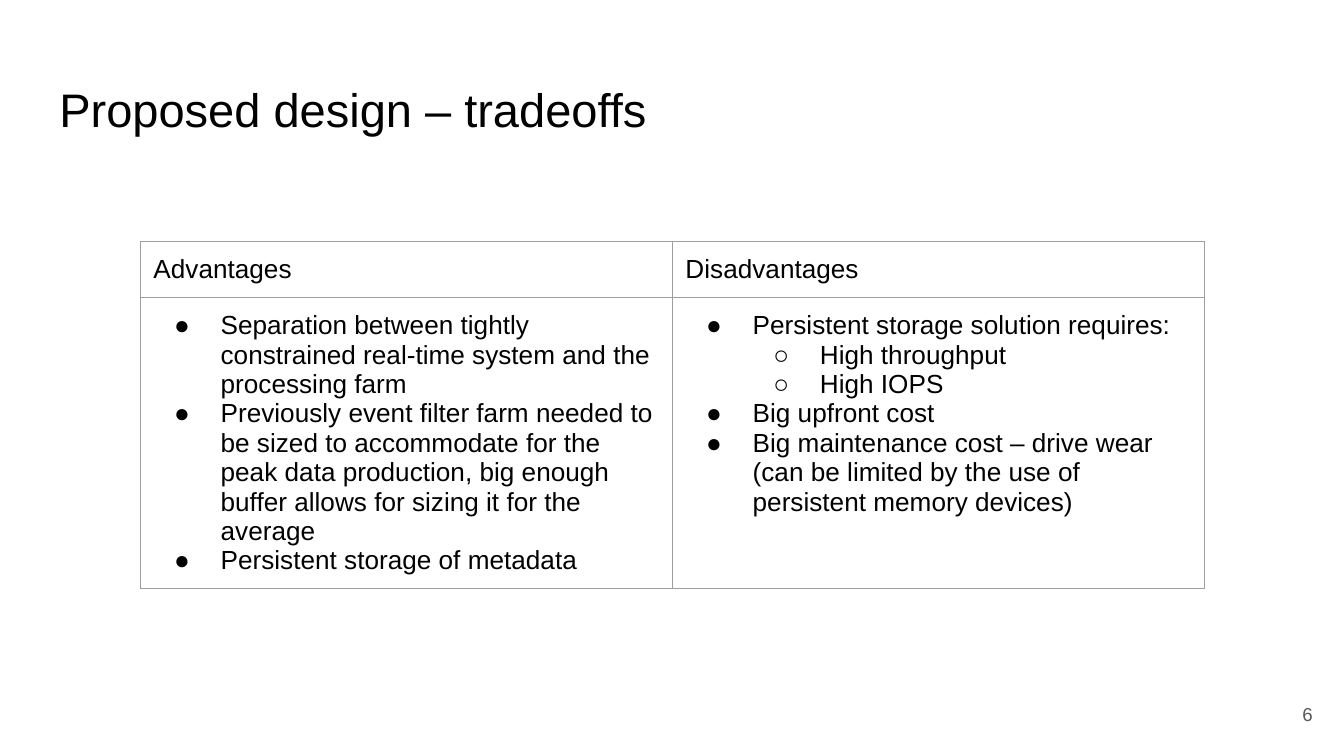
from lxml.etree import SubElement
from pptx import Presentation
from pptx.dml.color import RGBColor
from pptx.enum.text import MSO_ANCHOR as Anchor, MSO_AUTO_SIZE as AutoSize, PP_ALIGN as Align
from pptx.oxml.ns import qn
from pptx.util import Cm, Pt

BLACK = RGBColor(0x00, 0x00, 0x00)
GRAY = RGBColor(0x59, 0x59, 0x59)
BORDER = RGBColor(0x9E, 0x9E, 0x9E)
FONT = "Arial"
INSET = Cm(0.25)
BULLETS = "●○"

# Each column: heading, then (level, text) items
COLUMNS = [
    ("Advantages", [
        (0, "Separation between tightly constrained real-time system and the processing farm"),
        (0, "Previously event filter farm needed to be sized to accommodate for the peak data "
            "production, big enough buffer allows for sizing it for the average"),
        (0, "Persistent storage of metadata"),
    ]),
    ("Disadvantages", [
        (0, "Persistent storage solution requires:"),
        (1, "High throughput"),
        (1, "High IOPS"),
        (0, "Big upfront cost"),
        (0, "Big maintenance cost – drive wear (can be limited by the use of persistent "
            "memory devices)"),
    ]),
]


def set_values(target, values):
    for name, value in values.items():
        setattr(target, name, value)


def format_font(paragraph, size, color=BLACK):
    set_values(paragraph.font, {"name": FONT, "size": Pt(size), "bold": False})
    paragraph.font.color.rgb = color


def set_insets(target):
    sides = ("left", "top", "right", "bottom")
    set_values(target, {f"margin_{side}": INSET for side in sides})


def add_bullet(paragraph, level):
    paragraph.level = level
    properties = paragraph._p.get_or_add_pPr()
    properties.set("marL", str(Cm(1.27 * (level + 1))))
    properties.set("indent", str(-Cm(0.88)))
    color = SubElement(properties, qn("a:buClr"))
    SubElement(color, qn("a:srgbClr"), val=str(BLACK))
    SubElement(properties, qn("a:buFont"), typeface=FONT)
    SubElement(properties, qn("a:buChar"), char=BULLETS[level])


def format_cell(cell):
    set_insets(cell)
    cell.vertical_anchor = Anchor.TOP
    properties = cell._tc.get_or_add_tcPr()
    for side in "LRTB":
        line = SubElement(properties, qn(f"a:ln{side}"), w=str(Pt(0.75)))
        fill = SubElement(line, qn("a:solidFill"))
        SubElement(fill, qn("a:srgbClr"), val=str(BORDER))
    cell.fill.background()


def fill_title(slide, text, left, top, width, height):
    title = slide.shapes.title
    set_values(title, {"left": left, "top": top, "width": width, "height": height})
    frame = title.text_frame
    set_insets(frame)
    set_values(frame, {"text": text, "word_wrap": True, "auto_size": AutoSize.NONE,
                       "vertical_anchor": Anchor.BOTTOM})
    paragraph = frame.paragraphs[0]
    paragraph.alignment = Align.LEFT
    format_font(paragraph, 25.2)


def add_tradeoff_table(slide, columns, left, top, width, height):
    table = slide.shapes.add_table(2, len(columns), left, top, width, height).table
    set_values(table, {"first_row": False, "horz_banding": False})
    header_height = Cm(1.06)
    table.rows[0].height = header_height
    table.rows[1].height = height - header_height

    for index, (heading, items) in enumerate(columns):
        header, body = table.cell(0, index), table.cell(1, index)
        format_cell(header)
        format_cell(body)
        header.text = heading
        format_font(header.text_frame.paragraphs[0], 14)
        body.text = "\n".join(text for _, text in items)
        for paragraph, (level, _) in zip(body.text_frame.paragraphs, items):
            add_bullet(paragraph, level)
            format_font(paragraph, 14)


def add_page_number(slide, number, left, top, width, height):
    frame = slide.shapes.add_textbox(left, top, width, height).text_frame
    set_insets(frame)
    set_values(frame, {"text": str(number), "word_wrap": True,
                       "vertical_anchor": Anchor.MIDDLE})
    paragraph = frame.paragraphs[0]
    paragraph.alignment = Align.RIGHT
    format_font(paragraph, 10, GRAY)


def main():
    presentation = Presentation()
    set_values(presentation, {"slide_width": Cm(25.4), "slide_height": Cm(14.29)})
    slide = presentation.slides.add_slide(presentation.slide_layouts[5])

    fill_title(slide, "Proposed design – tradeoffs", Cm(0.87), Cm(1.24), Cm(23.67), Cm(1.6))
    add_tradeoff_table(slide, COLUMNS, Cm(2.65), Cm(4.57), Cm(20.11), Cm(6.56))
    add_page_number(slide, 6, Cm(23.54), Cm(12.95), Cm(1.52), Cm(1.09))

    presentation.save("out.pptx")


if __name__ == "__main__":
    main()
